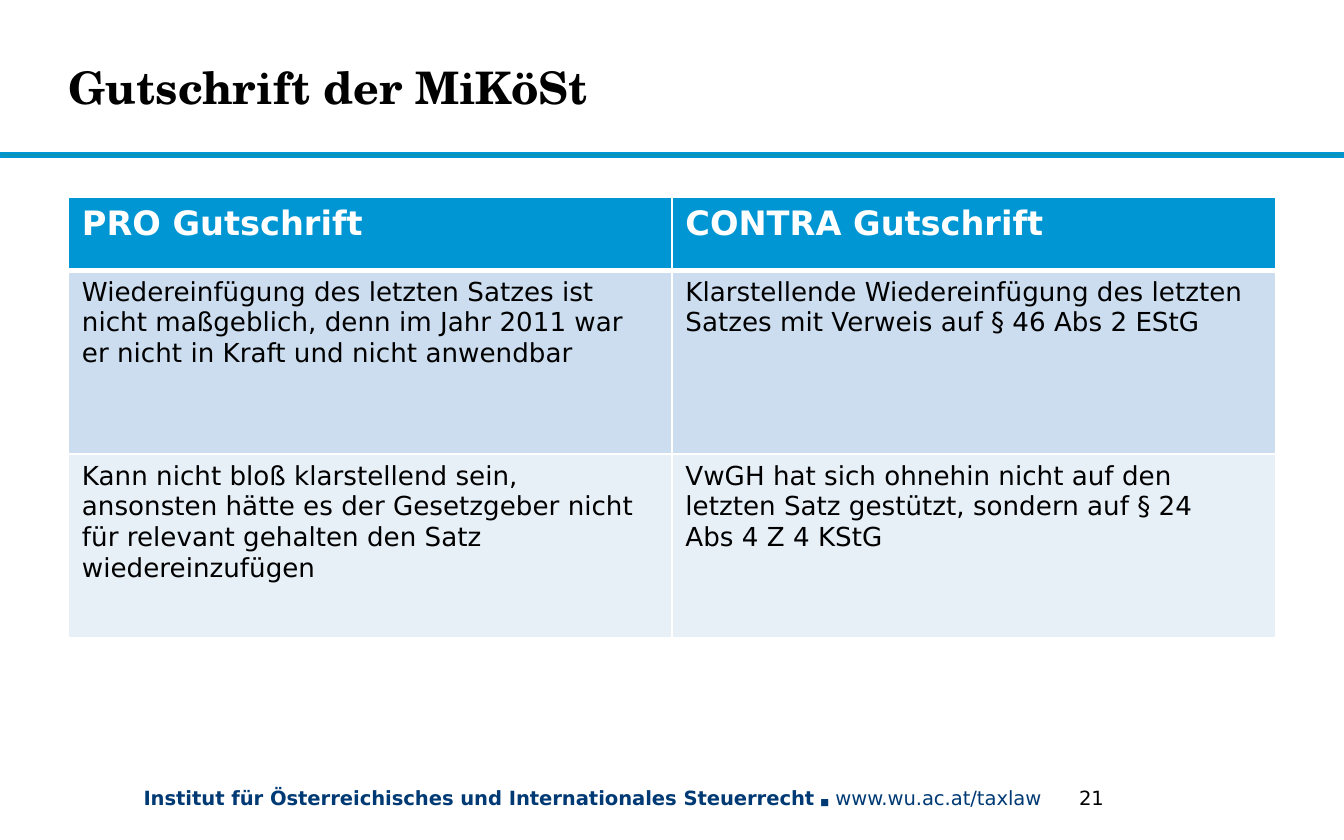
from dataclasses import dataclass
from lxml.etree import SubElement
from pptx import Presentation
from pptx.dml.color import RGBColor
from pptx.enum.shapes import MSO_SHAPE
from pptx.enum.text import MSO_ANCHOR, PP_ALIGN
from pptx.oxml.ns import qn
from pptx.util import Pt


@dataclass(frozen=True)
class Theme:
    sans: str = "DejaVu Sans"
    serif: str = "TeX Gyre Schola"
    black: str = "000000"
    white: str = "FFFFFF"
    blue: str = "0096D3"
    teal: str = "0C94B7"
    navy: str = "003A74"
    band_dark: str = "CCDDEF"
    band_light: str = "E7EFF7"
    title: float = 24
    head: float = 18
    body: float = 14
    footer: float = 10.5
    gap: float = 8
    square: float = 5


@dataclass(frozen=True)
class Box:
    x: float
    y: float
    w: float
    h: float

    def emu(self) -> tuple:
        return Pt(self.x), Pt(self.y), Pt(self.w), Pt(self.h)


@dataclass(frozen=True)
class Span:
    text: str
    size: float
    color: str
    bold: bool = False


@dataclass(frozen=True)
class Row:
    cells: tuple
    height: float
    fill: str
    size: float
    color: str
    bold: bool = False
    top: float = 1
    bottom: float = 1


T = Theme()
ROWS = (
    Row(("PRO Gutschrift", "CONTRA Gutschrift"),
        38.9, T.blue, T.head, T.white, True, bottom=3),
    Row(("Wiedereinfügung des letzten Satzes ist nicht maßgeblich, denn im Jahr 2011 "
         "war er nicht in Kraft und nicht anwendbar",
         "Klarstellende Wiedereinfügung des letzten Satzes mit Verweis auf § 46 Abs 2 EStG"),
        98.6, T.band_dark, T.body, T.black, top=3),
    Row(("Kann nicht bloß klarstellend sein, ansonsten hätte es der Gesetzgeber nicht "
         "für relevant gehalten den Satz wiedereinzufügen",
         "VwGH hat sich ohnehin nicht auf den letzten Satz gestützt, sondern auf § 24\n"
         "Abs 4 Z 4 KStG"),
        98.6, T.band_light, T.body, T.black),
)
FOOTER = (
    Span("Institut für Österreichisches und Internationales Steuerrecht", T.footer, T.navy, True),
    Span(" ", T.gap, T.navy, True),
    Span("■", T.square, T.navy),
    Span(" www.wu.ac.at/taxlaw", T.footer, T.navy),
)
PAGE = (Span("21", T.footer, T.black),)


def style(font, name: str, size: float, color: str, bold: bool) -> None:
    font.name = name
    font.size = Pt(size)
    font.bold = bold
    font.color.rgb = RGBColor.from_string(color)


def add_title(s, box: Box, text: str) -> None:
    sp = s.shapes.title
    sp.left, sp.top, sp.width, sp.height = box.emu()
    tf = sp.text_frame
    tf.margin_left = tf.margin_top = tf.margin_right = tf.margin_bottom = 0
    tf.vertical_anchor = MSO_ANCHOR.MIDDLE
    tf.word_wrap = True
    tf.text = text
    p = tf.paragraphs[0]
    p.alignment = PP_ALIGN.LEFT
    style(p.runs[0].font, T.serif, T.title, T.black, True)


def add_rule(s, box: Box) -> None:
    sp = s.shapes.add_shape(MSO_SHAPE.RECTANGLE, *box.emu())
    sp.shadow.inherit = False
    sp.fill.solid()
    sp.fill.fore_color.rgb = RGBColor.from_string(T.teal)
    sp.line.color.rgb = RGBColor.from_string(T.blue)
    sp.line.width = Pt(1)


def add_spans(s, box: Box, spans: tuple) -> None:
    tf = s.shapes.add_textbox(*box.emu()).text_frame
    tf.word_wrap = True
    for span in spans:
        r = tf.paragraphs[0].add_run()
        r.text = span.text
        style(r.font, T.sans, span.size, span.color, span.bold)


def set_borders(cell, row: Row) -> None:
    tcPr = cell._tc.get_or_add_tcPr()
    for side, width in (("L", 1), ("R", 1), ("T", row.top), ("B", row.bottom)):
        ln = SubElement(tcPr, qn(f"a:ln{side}"), w=str(Pt(width)))
        SubElement(SubElement(ln, qn("a:solidFill")), qn("a:srgbClr"), val=T.white)


def add_comparison(s, box: Box, rows: tuple) -> None:
    cols = len(rows[0].cells)
    table = s.shapes.add_table(len(rows), cols, *box.emu()).table
    for col in table.columns:
        col.width = Pt(box.w / cols)
    for i, row in enumerate(rows):
        table.rows[i].height = Pt(row.height)
        for j, text in enumerate(row.cells):
            cell = table.cell(i, j)
            set_borders(cell, row)
            cell.fill.solid()
            cell.fill.fore_color.rgb = RGBColor.from_string(row.fill)
            cell.text_frame.text = text
            for p in cell.text_frame.paragraphs:
                for r in p.runs:
                    style(r.font, T.sans, row.size, row.color, row.bold)


def main() -> None:
    prs = Presentation()
    prs.slide_width, prs.slide_height = Pt(720), Pt(450)
    s = prs.slides.add_slide(prs.slide_layouts[5])
    add_rule(s, Box(0, 82, 720, 2.2))
    add_spans(s, Box(69.8, 417.6, 501.2, 20), FOOTER)
    add_comparison(s, Box(36.7, 105.8, 646.6, sum(row.height for row in ROWS)), ROWS)
    add_title(s, Box(36.7, 10.8, 538.6, 71.3), "Gutschrift der MiKöSt")
    add_spans(s, Box(571, 417.6, 51.8, 20), PAGE)
    prs.save("out.pptx")


if __name__ == "__main__":
    main()
